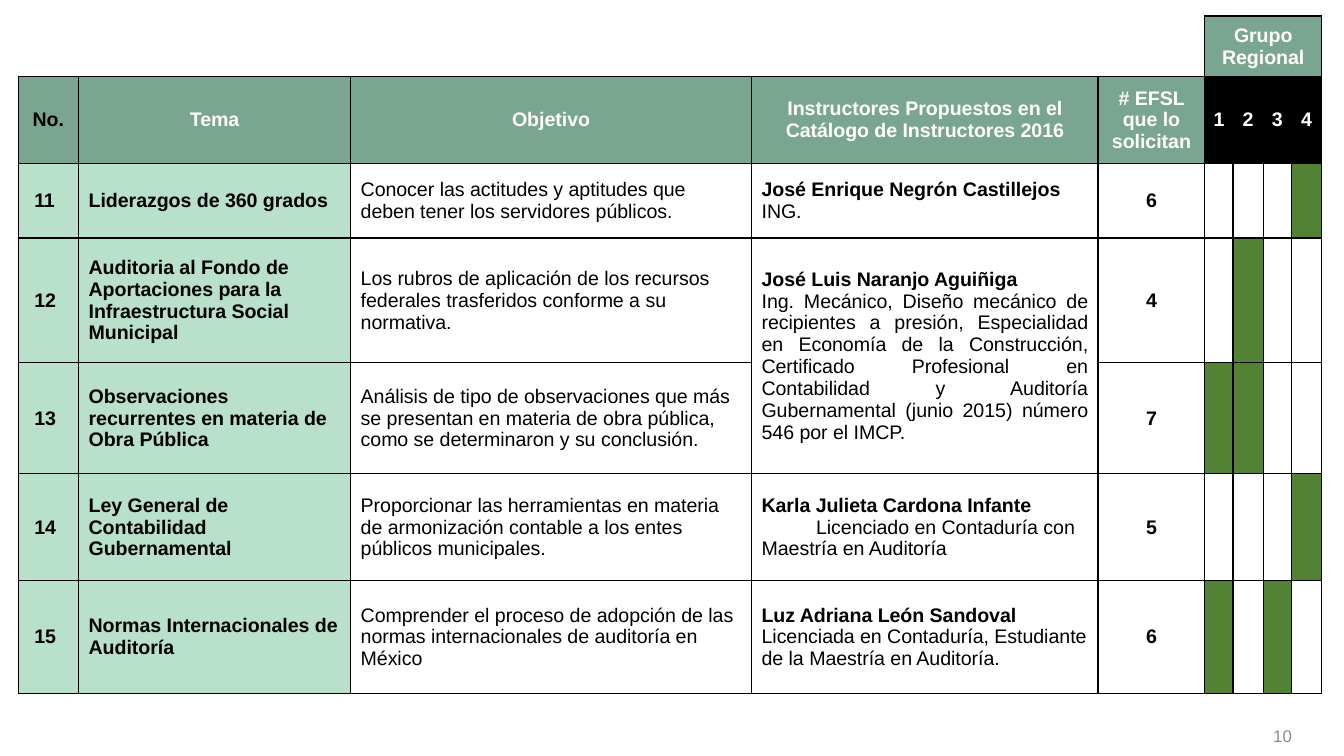
from pptx import Presentation
from pptx.dml.color import RGBColor
from pptx.enum.text import MSO_ANCHOR, PP_ALIGN
from pptx.oxml.ns import qn
from pptx.util import Inches, Pt
from lxml.etree import SubElement

HEADER, MINT, GREEN = "79A591", "B8E0CA", "548235"
BLACK, WHITE, GRAY = "000000", "FFFFFF", "8C8C8C"
LEFT, CENTER, JUSTIFY = PP_ALIGN.LEFT, PP_ALIGN.CENTER, PP_ALIGN.JUSTIFY

COLS = [0.3, 1.35, 1.99, 1.72, 0.53, 0.14, 0.15, 0.14, 0.15]
ROWS = [0.3, 0.43, 0.37, 0.62, 0.55, 0.53, 0.56]
HEADINGS = ["No.", "Tema", "Objetivo",
            "Instructores Propuestos en el Catálogo de Instructores 2016",
            "# EFSL que lo solicitan", "1", "2", "3", "4"]
FIRST_GROUP = 5  # column of regional group 1

# Number, topic, objective, instructor (name, profile), requests, groups
COURSES = [
    ("11", "Liderazgos de 360 grados",
     "Conocer las actitudes y aptitudes que deben tener los servidores públicos.",
     ("José Enrique Negrón Castillejos", "ING."), "6", {4}),
    ("12", "Auditoria al Fondo de Aportaciones para la Infraestructura Social Municipal",
     "Los rubros de aplicación de los recursos federales trasferidos conforme a su normativa.",
     ("José Luis Naranjo Aguiñiga",
      "Ing. Mecánico, Diseño mecánico de recipientes a presión, Especialidad en Economía "
      "de la Construcción, Certificado Profesional en Contabilidad y Auditoría "
      "Gubernamental (junio 2015) número 546 por el IMCP."), "4", {2}),
    ("13", "Observaciones recurrentes en materia de Obra Pública",
     "Análisis de tipo de observaciones que más se presentan en materia de obra pública, "
     "como se determinaron y su conclusión.",
     None, "7", {1, 2}),
    ("14", "Ley General de Contabilidad Gubernamental",
     "Proporcionar las herramientas en materia de armonización contable a los entes "
     "públicos municipales.",
     ("Karla Julieta Cardona Infante",
      "Licenciado en Contaduría con Maestría en Auditoría"), "5", {4}),
    ("15", "Normas Internacionales de Auditoría",
     "Comprender el proceso de adopción de las normas internacionales de auditoría en México",
     ("Luz Adriana León Sandoval",
      "Licenciada en Contaduría, Estudiante de la Maestría en Auditoría."), "6", {1, 3}),
]


def rgb(color):
    return RGBColor.from_string(color)


def set_borders(cell, sides):
    tcPr = cell._tc.get_or_add_tcPr()
    for side in "LRTB":
        ln = SubElement(tcPr, qn(f"a:ln{side}"), w=str(Pt(0.5)))
        if side in sides:
            fill = SubElement(ln, qn("a:solidFill"))
            SubElement(fill, qn("a:srgbClr"), val=BLACK)
        else:
            SubElement(ln, qn("a:noFill"))


def style_cell(cell, fill=None, sides="LRTB"):
    set_borders(cell, sides)
    if fill:
        cell.fill.solid()
        cell.fill.fore_color.rgb = rgb(fill)
    else:
        cell.fill.background()
    # Without side margins the narrow group columns keep their width
    cell.margin_left = cell.margin_right = 0
    cell.margin_top = cell.margin_bottom = 0


def write(cell, lines, align=LEFT, color=BLACK, bold=(True,), inset=0.05):
    cell.vertical_anchor = MSO_ANCHOR.MIDDLE
    cell.margin_left = cell.margin_right = Inches(inset)
    cell.margin_top = cell.margin_bottom = Inches(0.03)
    tf = cell.text_frame
    tf.text = "\n".join(lines)
    for p, heavy in zip(tf.paragraphs, bold):
        p.alignment = align
        font = p.runs[0].font
        font.name, font.size, font.bold = "Arial", Pt(7), heavy
        font.color.rgb = rgb(color)


def add_header(table):
    # Group heading above the four narrow columns
    for c in range(len(COLS)):
        cell = table.cell(0, c)
        if c < FIRST_GROUP:
            style_cell(cell, sides="RB" if c == FIRST_GROUP - 1 else "B")
        else:
            style_cell(cell, HEADER)
    table.cell(0, FIRST_GROUP).merge(table.cell(0, len(COLS) - 1))
    write(table.cell(0, FIRST_GROUP), ["Grupo Regional"], CENTER, WHITE)

    # Column headings
    for c, heading in enumerate(HEADINGS):
        cell = table.cell(1, c)
        is_group = c >= FIRST_GROUP
        style_cell(cell, BLACK if is_group else HEADER)
        write(cell, [heading], CENTER, WHITE if c else BLACK,
              inset=0.02 if is_group else 0.05)


def add_course(table, row, course):
    number, topic, objective, instructor, requests, groups = course
    for c in range(len(COLS)):
        marked = c - FIRST_GROUP + 1 in groups
        style_cell(table.cell(row, c), MINT if c < 2 else GREEN if marked else None)
    write(table.cell(row, 0), [number], inset=0.08)
    write(table.cell(row, 1), [topic])
    write(table.cell(row, 2), [objective], bold=(False,))
    write(table.cell(row, 4), [requests], CENTER)
    if instructor:
        align = JUSTIFY if number == "12" else LEFT
        write(table.cell(row, 3), instructor, align, bold=(True, False))


def add_course_table(s, x, y):
    frame = s.shapes.add_table(len(ROWS), len(COLS), Inches(x), Inches(y),
                               Inches(sum(COLS)), Inches(sum(ROWS)))
    table = frame.table
    table.first_row = table.horz_banding = False
    for column, width in zip(table.columns, COLS):
        column.width = Inches(width)
    for row, height in zip(table.rows, ROWS):
        row.height = Inches(height)

    add_header(table)
    for row, course in enumerate(COURSES, start=2):
        add_course(table, row, course)

    # Courses 12 and 13 share an instructor
    table.cell(3, 3).merge(table.cell(4, 3))
    # The profile for course 14 starts indented
    profile = table.cell(5, 3).text_frame.paragraphs[1]
    pPr = profile._p.get_or_add_pPr()
    pPr.set("marL", "0")
    pPr.set("indent", str(Inches(0.27)))


def add_page_number(s, x, y, w, h):
    tf = s.shapes.add_textbox(Inches(x), Inches(y), Inches(w), Inches(h)).text_frame
    tf.word_wrap = True
    tf.vertical_anchor = MSO_ANCHOR.MIDDLE
    tf.text = "10"
    p = tf.paragraphs[0]
    p.alignment = PP_ALIGN.RIGHT
    font = p.runs[0].font
    font.name, font.size = "Arial", Pt(6)
    font.color.rgb = rgb(GRAY)


def main():
    prs = Presentation()
    prs.slide_width, prs.slide_height = Inches(6.67), Inches(3.75)
    s = prs.slides.add_slide(prs.slide_layouts[6])
    add_page_number(s, 5.01, 3.55, 1.5, 0.2)
    add_course_table(s, 0.09, 0.08)
    prs.save("out.pptx")


if __name__ == "__main__":
    main()
